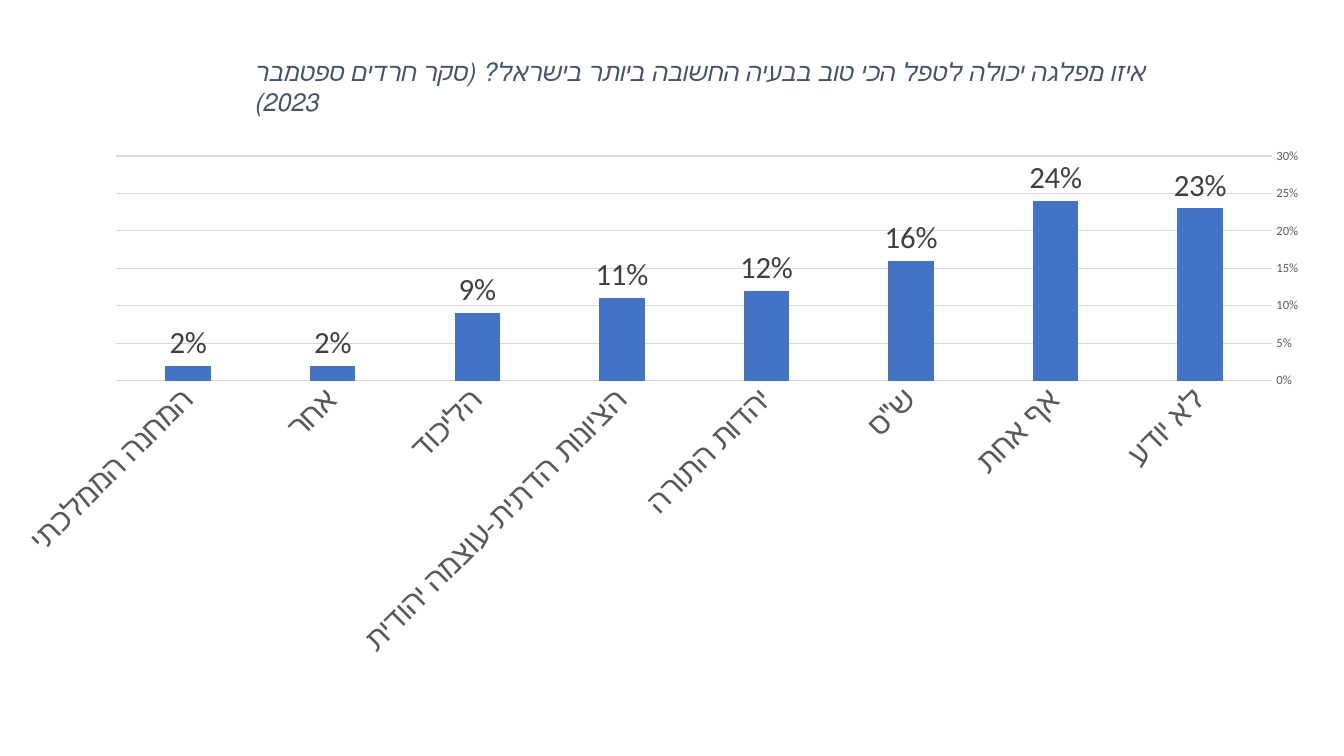
from pptx import Presentation
from pptx.chart.data import CategoryChartData
from pptx.dml.color import RGBColor
from pptx.enum.chart import XL_CHART_TYPE as ChartType
from pptx.enum.chart import XL_LABEL_POSITION as LabelPosition
from pptx.enum.chart import XL_TICK_MARK as TickMark
from pptx.enum.text import MSO_ANCHOR as Anchor
from pptx.enum.text import MSO_AUTO_SIZE as AutoSize
from pptx.enum.text import PP_ALIGN as Align
from pptx.util import Inches, Pt

WIDTH, HEIGHT = Inches(13.33), Inches(7.5)
FONT = "Calibri"
QUESTION = "איזו מפלגה יכולה לטפל הכי טוב בבעיה החשובה ביותר בישראל? (סקר חרדים ספטמבר 2023)"
ANSWERS = {
    "לא יודע": 0.23,
    "אף אחת": 0.24,
    'ש"ס': 0.16,
    "יהדות התורה": 0.12,
    "הציונות הדתית-עוצמה יהודית": 0.11,
    "הליכוד": 0.09,
    "אחר": 0.02,
    "המחנה הממלכתי": 0.02,
}


def rgb(value):
    return RGBColor.from_string(value)


def apply(target, formats):
    for name, value in formats.items():
        setattr(target, name, value)


def style_font(font, size, color, **extras):
    apply(font, {"name": FONT, "size": Pt(size), **extras})
    font.color.rgb = rgb(color)


def style_line(line, color, width=0.75):
    line.color.rgb = rgb(color)
    line.width = Pt(width)


def place(left, top, width, height):
    return {
        "left": int(WIDTH * left),
        "top": int(HEIGHT * top),
        "width": int(WIDTH * width),
        "height": int(HEIGHT * height),
    }


def write_question(heading):
    apply(heading, place(0.1815, 0.068, 0.7044, 0.0947))
    frame = heading.text_frame
    frame.text = QUESTION
    apply(frame, {
        "word_wrap": True,
        "auto_size": AutoSize.SHAPE_TO_FIT_TEXT,
        "vertical_anchor": Anchor.TOP,
    })
    paragraph = frame.paragraphs[0]
    paragraph.alignment = Align.LEFT
    paragraph._p.get_or_add_pPr().set("rtl", "1")
    style_font(paragraph.runs[0].font, 18, "44546A", italic=True)


def style_axis(axis, size, formats):
    apply(axis, {"major_tick_mark": TickMark.NONE, "minor_tick_mark": TickMark.NONE, **formats})
    style_font(axis.tick_labels.font, size, "595959")


def add_answers(slide):
    answers = CategoryChartData(number_format="0%")
    answers.categories = list(ANSWERS)
    answers.add_series("Series 1", list(ANSWERS.values()))
    box = place(0, 0.1827, 0.9857, 0.7013)
    chart = slide.shapes.add_chart(
        ChartType.COLUMN_CLUSTERED, box["left"], box["top"], box["width"], box["height"], answers
    ).chart
    apply(chart, {"has_legend": False, "has_title": False})
    style_font(chart.font, 10, "000000")

    parties, shares = chart.category_axis, chart.value_axis
    style_axis(parties, 22, {"reverse_order": True, "has_major_gridlines": False})
    style_line(parties.format.line, "D9D9D9")
    style_axis(shares, 9, {"has_major_gridlines": True})
    apply(shares.tick_labels, {"number_format": "0%", "number_format_is_linked": False})
    shares.format.line.fill.background()
    style_line(shares.major_gridlines.format.line, "D9D9D9")

    plot = chart.plots[0]
    apply(plot, {"gap_width": 219, "overlap": -27, "vary_by_categories": False})
    bars = plot.series[0]
    bars.format.fill.solid()
    bars.format.fill.fore_color.rgb = rgb("4472C4")
    labels = bars.data_labels
    apply(labels, {
        "show_value": True,
        "position": LabelPosition.OUTSIDE_END,
        "number_format": "0%",
        "number_format_is_linked": False,
    })
    style_font(labels.font, 22, "404040")


def main():
    deck = Presentation()
    apply(deck, {"slide_width": WIDTH, "slide_height": HEIGHT})
    slide = deck.slides.add_slide(deck.slide_layouts.get_by_name("Title Only"))
    add_answers(slide)
    write_question(slide.shapes.title)
    deck.save("out.pptx")


if __name__ == "__main__":
    main()
